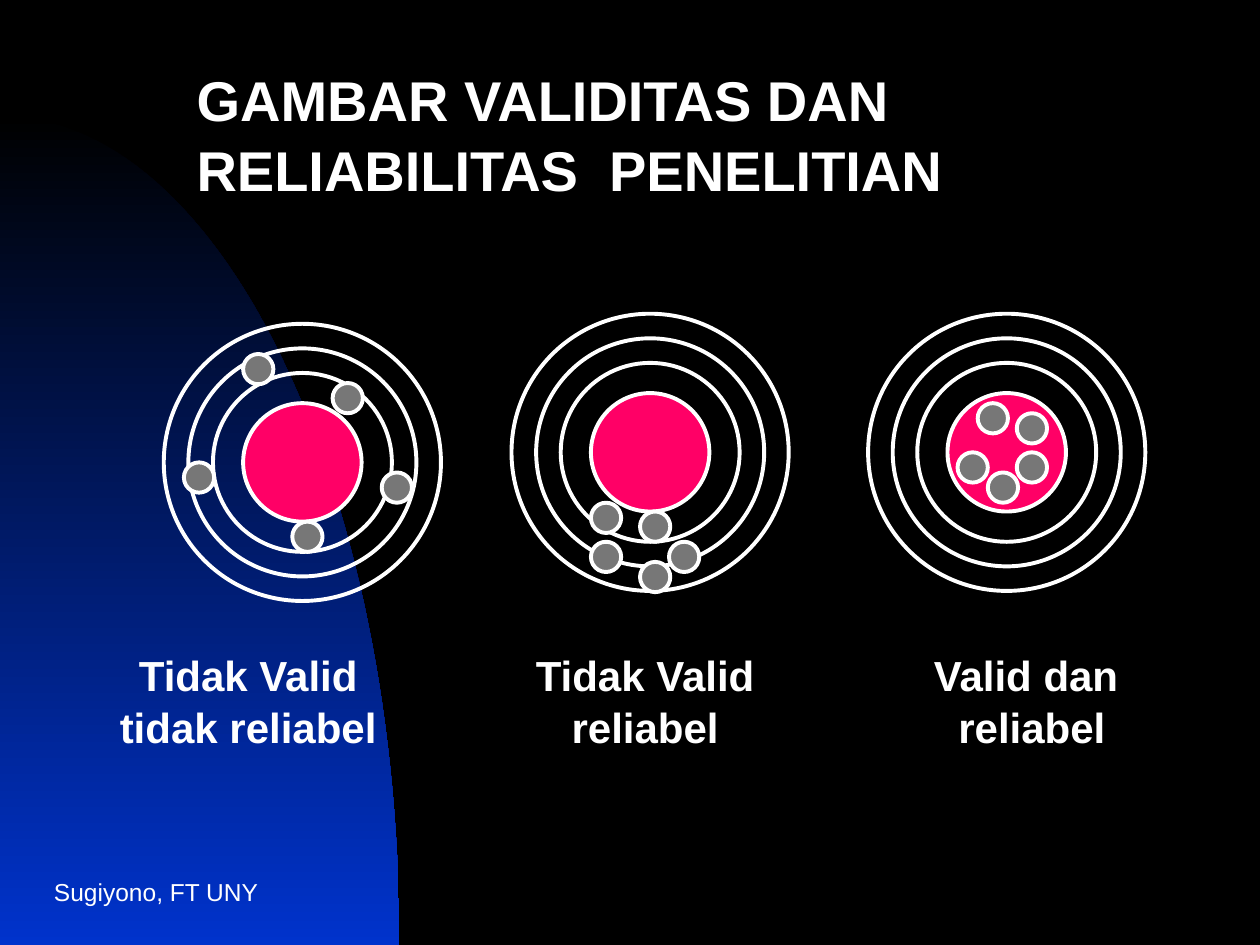
from pptx import Presentation
from pptx import util as u
from pptx.dml.color import RGBColor
from pptx.enum import shapes, text

WHITE, BLACK, BLUE, PINK, GREY = "FFFFFF", "000000", "0033CC", "FF0066", "777777"
Inches = u.Inches


def color(value):
    return RGBColor.from_string(value)


def write(shape, words, size, bold=True, align=text.PP_ALIGN.LEFT, spacing=1.0):
    frame = shape.text_frame
    frame.word_wrap = True
    paragraph = frame.paragraphs[0]
    paragraph.alignment = align
    paragraph.line_spacing = spacing
    run = paragraph.add_run()
    run.text = words
    run.font.name = "Arial"
    run.font.size = u.Pt(size)
    run.font.bold = bold
    run.font.color.rgb = color(WHITE)
    return frame


presentation = Presentation()
presentation.slide_width = Inches(10)
presentation.slide_height = Inches(7.5)
slide = presentation.slides.add_slide(presentation.slide_layouts[5])
slide.background.fill.solid()
slide.background.fill.fore_color.rgb = color(BLACK)

# Curved gradient panel: a cubic curve closed along the left edge
top, right, bottom = 0.92, 3.17, 7.5
curve = []
for step in range(1, 61):
    t = step / 60
    x = 3 * (1 - t) ** 2 * t * 1.75 + 3 * (1 - t) * t ** 2 * right + t ** 3 * right
    y = ((1 - t) ** 3 + 3 * (1 - t) ** 2 * t) * top + 3 * (1 - t) * t ** 2 * 3.87 + t ** 3 * bottom
    curve.append((Inches(x), Inches(y)))
builder = slide.shapes.build_freeform(0, Inches(top))
builder.add_line_segments(curve + [(0, Inches(bottom))], close=True)
panel = builder.convert_to_shape()
panel.shadow.inherit = False
panel.line.fill.background()
panel.fill.gradient()
panel.fill.gradient_angle = 270
for stop, value in zip(panel.fill.gradient_stops, (BLACK, BLUE)):
    stop.color.rgb = color(value)
for stop, position in zip(panel.fill.gradient_stops, (0, 1)):
    stop.position = position

# Title
title = slide.shapes.title
title.left, title.top, title.width, title.height = map(Inches, (1.46, 0.44, 7.95, 1.17))
frame = write(title, "GAMBAR VALIDITAS DAN RELIABILITAS  PENELITIAN", 32, spacing=1.05)
frame.vertical_anchor = text.MSO_ANCHOR.TOP
frame.auto_size = text.MSO_AUTO_SIZE.NONE

# Author
author = slide.shapes.add_textbox(Inches(0.33), Inches(6.83), Inches(2.08), Inches(0.5))
frame = write(author, "Sugiyono, FT UNY", 14, bold=False)
frame.vertical_anchor = text.MSO_ANCHOR.MIDDLE

# Targets: centre, caption left edge, caption, shot offsets from the centre
targets = [
    (2.40, 3.67, 0.67, "Tidak Valid tidak reliabel",
     [(0.04, 0.59), (0.75, 0.2), (-0.35, -0.74), (-0.82, 0.12), (0.36, -0.51)]),
    (5.16, 3.59, 3.82, "Tidak Valid reliabel",
     [(0.04, 0.59), (0.27, 0.83), (-0.35, 0.83), (-0.35, 0.52), (0.04, 0.99)]),
    (7.99, 3.59, 6.89, "Valid dan  reliabel",
     [(0.2, -0.19), (-0.11, -0.27), (-0.03, 0.28), (-0.27, 0.12), (0.2, 0.12)]),
]
rings = [(0, 0, 0.94, PINK), (0, 0, 1.42, None), (0, 0, 1.81, None), (0, 0, 2.2, None)]

for center_x, center_y, caption_left, caption, shots in targets:
    # Bullseye and rings, then the shots on top
    for dx, dy, size, fill in rings + [(dx, dy, 0.24, GREY) for dx, dy in shots]:
        circle = slide.shapes.add_shape(
            shapes.MSO_SHAPE.OVAL,
            Inches(center_x + dx - size / 2), Inches(center_y + dy - size / 2),
            Inches(size), Inches(size))
        circle.shadow.inherit = False
        circle.line.color.rgb = color(WHITE)
        circle.line.width = u.Pt(2.25)
        if fill:
            circle.fill.solid()
            circle.fill.fore_color.rgb = color(fill)
        else:
            circle.fill.background()

    label = slide.shapes.add_textbox(Inches(caption_left), Inches(5.09), Inches(2.6), Inches(0.91))
    write(label, caption, 24, align=text.PP_ALIGN.CENTER, spacing=1.04)

presentation.save("out.pptx")
